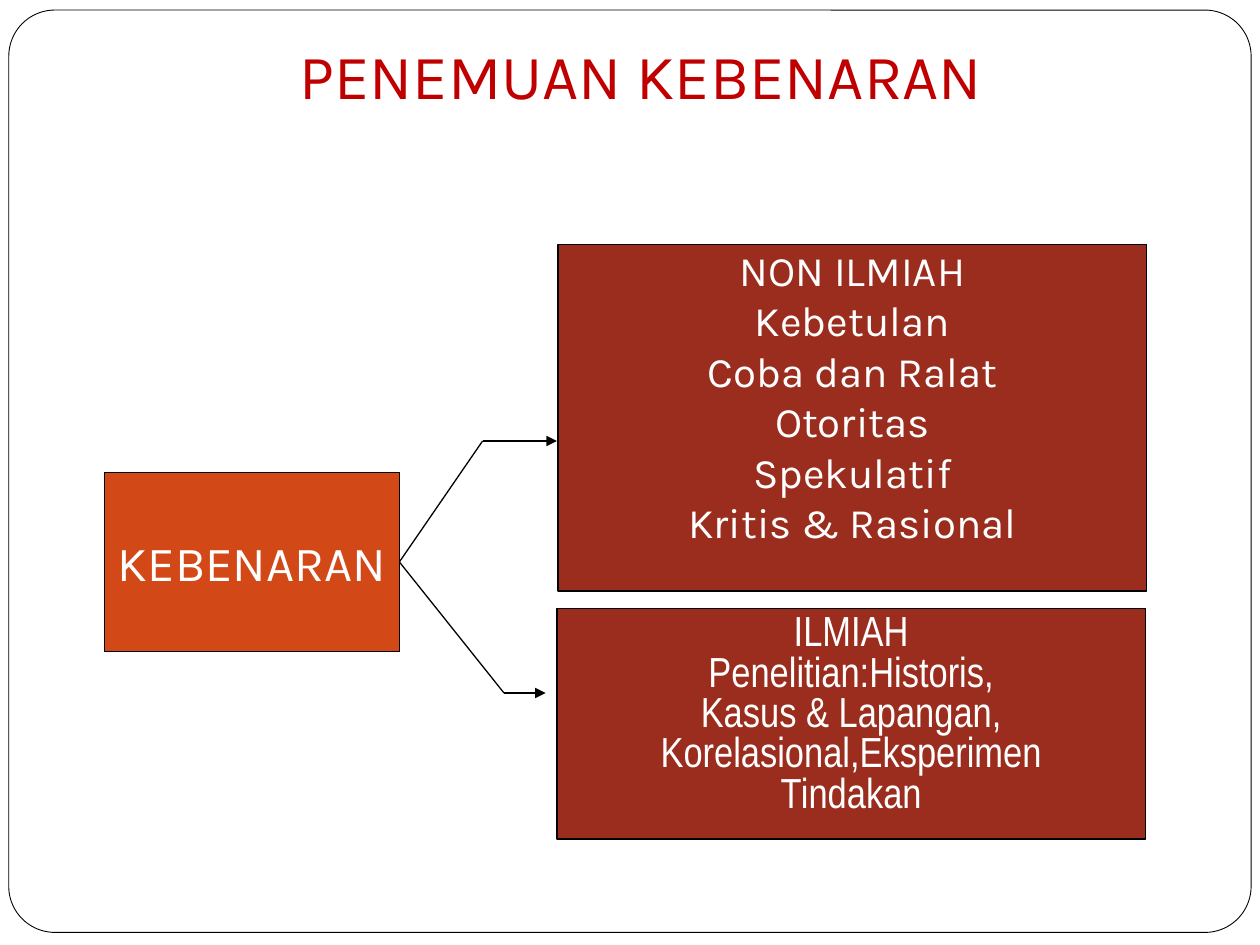
from lxml import etree
from pptx import Presentation
from pptx.dml.color import RGBColor
from pptx.enum.shapes import MSO_CONNECTOR, MSO_SHAPE
from pptx.enum.text import MSO_ANCHOR, PP_ALIGN
from pptx.oxml.ns import qn
from pptx.util import Inches, Pt

RECTANGLE, ROUNDED = MSO_SHAPE.RECTANGLE, MSO_SHAPE.ROUNDED_RECTANGLE
STRAIGHT = MSO_CONNECTOR.STRAIGHT
TOP, MIDDLE, BOTTOM = MSO_ANCHOR.TOP, MSO_ANCHOR.MIDDLE, MSO_ANCHOR.BOTTOM
CENTER = PP_ALIGN.CENTER
RIGHT_SIDE = 3

BLACK, WHITE, RED, ORANGE, BRICK = "000000", "FFFFFF", "C00000", "D34817", "9B2D1F"
TITLE = "PENEMUAN KEBENARAN"
SOURCE = dict(lines=["KEBENARAN"], at=(0.83, 3.75, 2.34, 1.42), fill=ORANGE,
              size=28, font="Karla", anchor=MIDDLE, inset=0.05, spacing=1)
BRANCHES = [
    dict(lines=["NON ILMIAH", "Kebetulan", "Coba dan Ralat", "Otoritas",
                "Spekulatif", "Kritis & Rasional"],
         at=(4.43, 1.94, 4.67, 2.75), fill=BRICK,
         size=24, font="Karla", anchor=TOP, inset=0, spacing=1),
    dict(lines=["ILMIAH", "Penelitian:Historis,", "Kasus & Lapangan,",
                "Korelasional,Eksperimen", "Tindakan"],
         at=(4.42, 4.83, 4.67, 1.83), fill=BRICK,
         size=24, font="Arial Narrow", anchor=TOP, inset=0.05, spacing=0.8),
]
FORK = (3.17, 4.5)
ARROWS = [((3.83, 3.5), (4.42, 3.5)), ((4, 5.5), (4.33, 5.5))]


def color(value):
    """Return the colour for a hex string."""
    return RGBColor.from_string(value)


def write(frame, lines, size, font, text_color, spacing=1):
    """Fill a text frame with centred paragraphs."""
    for index, line in enumerate(lines):
        para = frame.add_paragraph() if index else frame.paragraphs[0]
        para.alignment = CENTER
        para.line_spacing = spacing
        span = para.add_run()
        span.text = line
        span.font.size = Pt(size)
        span.font.name = font
        span.font.color.rgb = color(text_color)


def add_box(slide, kind, at, fill, width=0.75):
    """Add a filled, black-outlined shape."""
    box = slide.shapes.add_shape(kind, *map(Inches, at))
    box.shadow.inherit = False
    box.fill.solid()
    box.fill.fore_color.rgb = color(fill)
    box.line.color.rgb = color(BLACK)
    box.line.width = Pt(width)
    return box


def add_label(slide, lines, at, fill, size, font, anchor, inset, spacing):
    """Add a rectangle holding white lines of text."""
    box = add_box(slide, RECTANGLE, at, fill)
    frame = box.text_frame
    frame.word_wrap = False
    frame.vertical_anchor = anchor
    frame.margin_top = frame.margin_bottom = Inches(inset)
    write(frame, lines, size, font, WHITE, spacing)
    return box


def add_line(slide, start, end, arrow=False):
    """Add a thin black line, with an arrowhead if asked."""
    line = slide.shapes.add_connector(STRAIGHT, *map(Inches, start + end))
    line.line.color.rgb = color(BLACK)
    line.line.width = Pt(0.75)
    properties = line._element.spPr
    if arrow:
        etree.SubElement(properties.find(qn("a:ln")), qn("a:tailEnd"), type="triangle")
    etree.SubElement(properties, qn("a:effectLst"))
    return line


def main():
    """Build the slide and save it."""
    deck = Presentation()
    deck.slide_width, deck.slide_height = Inches(10), Inches(7.5)
    slide = deck.slides.add_slide(deck.slide_layouts[5])

    border = add_box(slide, ROUNDED, (0.07, 0.08, 9.86, 7.32), WHITE, 0.5)
    border.adjustments[0] = 0.05
    title = slide.shapes.title
    border._element.addnext(title._element)
    title.left, title.top, title.width, title.height = map(Inches, (1.69, 0.13, 6.79, 0.86))
    title.text_frame.vertical_anchor = BOTTOM
    title.text_frame.margin_bottom = Inches(0.1)
    write(title.text_frame, [TITLE], 36, "Karla", RED)

    source = add_label(slide, **SOURCE)
    for bend, tip in ARROWS:
        add_line(slide, FORK, bend).begin_connect(source, RIGHT_SIDE)
        add_line(slide, bend, tip, arrow=True)
    for branch in BRANCHES:
        add_label(slide, **branch)
    deck.save("out.pptx")


if __name__ == "__main__":
    main()
